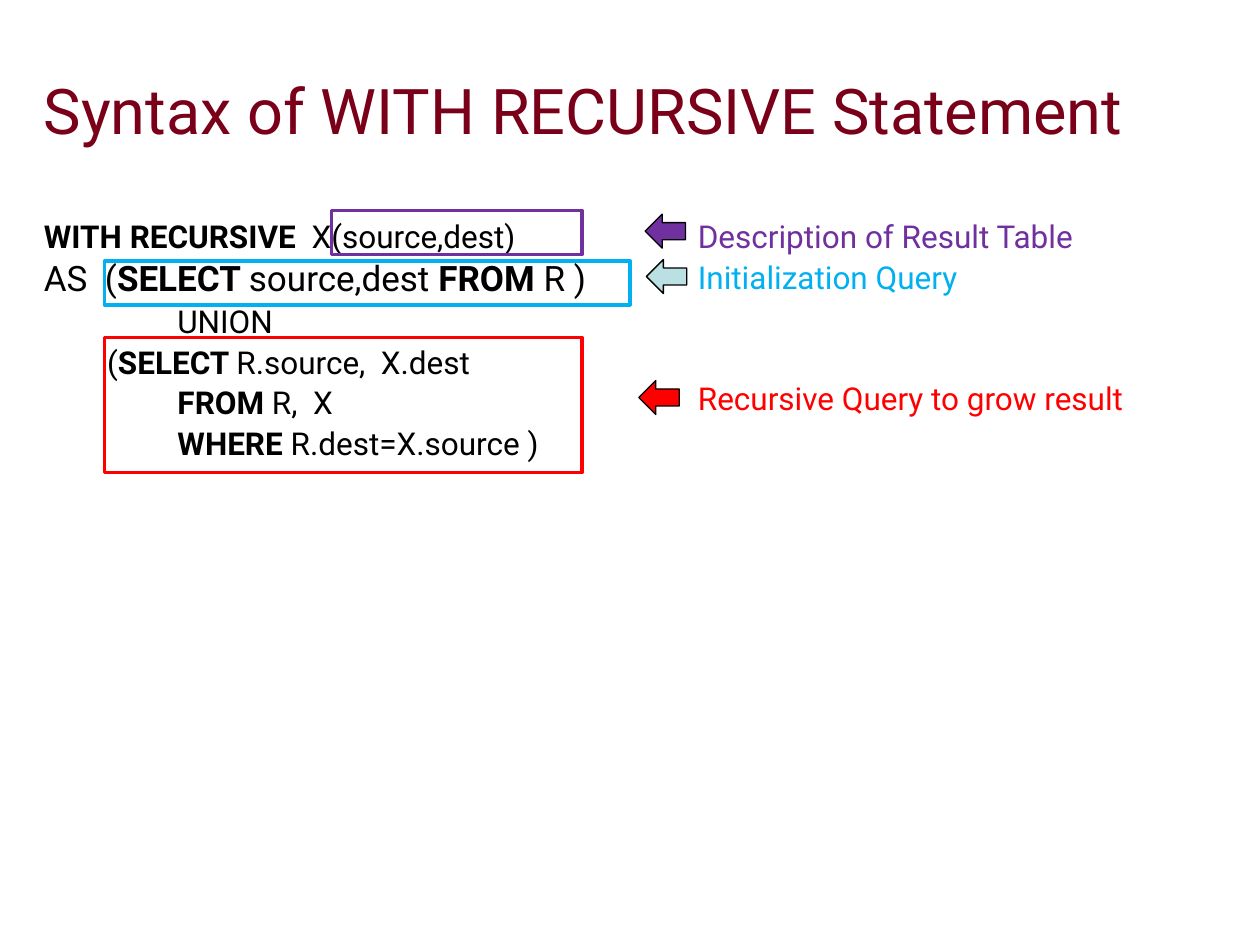
from pptx import Presentation, util as u
from pptx.dml.color import RGBColor
from pptx.enum import shapes, text

THEME = {
    "font": "Roboto",
    "title": "7A0019", "code": "000000", "outline": "000000",
    "table": "7030A0", "init": "00B0F0", "recursive": "FF0000", "pale": "BBE0E3",
    "title_size": 36, "size": 18, "large": 20,
    "leading": 0.8, "gap": 6, "indent": 0.44,
}

# Content: each line is (indent level, size, space before, runs of (words, bold, colour))
TITLE = [(0, "title_size", 0, [("Syntax of WITH RECURSIVE Statement", False, "title")])]
CODE = [
    (0, "size", 0, [("WITH RECURSIVE  ", True, "code"), ("X(source,dest)", False, "code")]),
    (0, "large", 6, [("AS  (", False, "code"), ("SELECT ", True, "code"),
                     ("source,dest ", False, "code"), ("FROM", True, "code"),
                     (" R )", False, "code")]),
    (1, "size", 6, [("          UNION", False, "code")]),
    (1, "size", 6, [(" (", False, "code"), ("SELECT ", True, "code"),
                    ("R.source,  X.dest", False, "code")]),
    (1, "size", 6, [("          ", False, "code"), ("FROM", True, "code"),
                    (" R,  X", False, "code")]),
    (1, "size", 6, [("          ", False, "code"), ("WHERE ", True, "code"),
                    ("R.dest=X.source )", False, "code")]),
]
LABELS = [
    (1, "size", 0, [("Description of Result Table", False, "table")]),
    (1, "size", 6, [("Initialization Query", False, "init")]),
    (1, "size", 52, [("Recursive Query to grow result", False, "recursive")]),
]

# Frames around the code: (left, top, width, height), line colour
FRAMES = [
    ((0.83, 2.68, 3.79, 1.07), "recursive"),
    ((0.83, 2.07, 4.17, 0.35), "init"),
    ((2.63, 1.67, 1.99, 0.35), "table"),
]
# Arrows from the labels: left, top, fill colour
ARROWS = [(5.13, 2.06, "pale"), (5.07, 3.02, "recursive"), (5.12, 1.7, "table")]
ARROW_SIZE = (0.32, 0.27)


def colour(name):
    return RGBColor.from_string(THEME[name])


def add_text(page, place, lines, anchor=text.MSO_ANCHOR.TOP, leading=THEME["leading"]):
    frame = page.shapes.add_textbox(*map(u.Inches, place)).text_frame
    frame.word_wrap = True
    frame.vertical_anchor = anchor
    for index, (level, size, before, runs) in enumerate(lines):
        para = frame.add_paragraph() if index else frame.paragraphs[0]
        para.line_spacing = leading
        para.space_before = u.Pt(before)
        para._p.get_or_add_pPr().set("marL", str(u.Inches(level * THEME["indent"])))
        for words, bold, tint in runs:
            span = para.add_run()
            span.text = words
            span.font.name = THEME["font"]
            span.font.size = u.Pt(THEME[size])
            span.font.bold = bold
            span.font.color.rgb = colour(tint)


def add_outline(page, kind, place, line, weight, fill=None):
    shape = page.shapes.add_shape(kind, *map(u.Inches, place))
    shape.shadow.inherit = False
    shape.line.color.rgb = colour(line)
    shape.line.width = u.Pt(weight)
    if fill:
        shape.fill.solid()
        shape.fill.fore_color.rgb = colour(fill)
    else:
        shape.fill.background()


def main():
    deck = Presentation()
    deck.slide_width, deck.slide_height = u.Inches(10), u.Inches(7.5)
    page = deck.slides.add_slide(deck.slide_layouts[6])

    # Title and the two columns
    add_text(page, (0.25, 0.33, 9.42, 1.08), TITLE, text.MSO_ANCHOR.MIDDLE, 1.0)
    add_text(page, (0.25, 1.73, 4.95, 3.18), CODE)
    add_text(page, (5, 1.73, 4.95, 4.43), LABELS)

    # Frames and arrows
    for place, line in FRAMES:
        add_outline(page, shapes.MSO_SHAPE.RECTANGLE, place, line, 2)
    for left, top, fill in ARROWS:
        add_outline(page, shapes.MSO_SHAPE.LEFT_ARROW, (left, top, *ARROW_SIZE),
                    "outline", 0.75, fill)

    deck.save("out.pptx")


if __name__ == "__main__":
    main()
